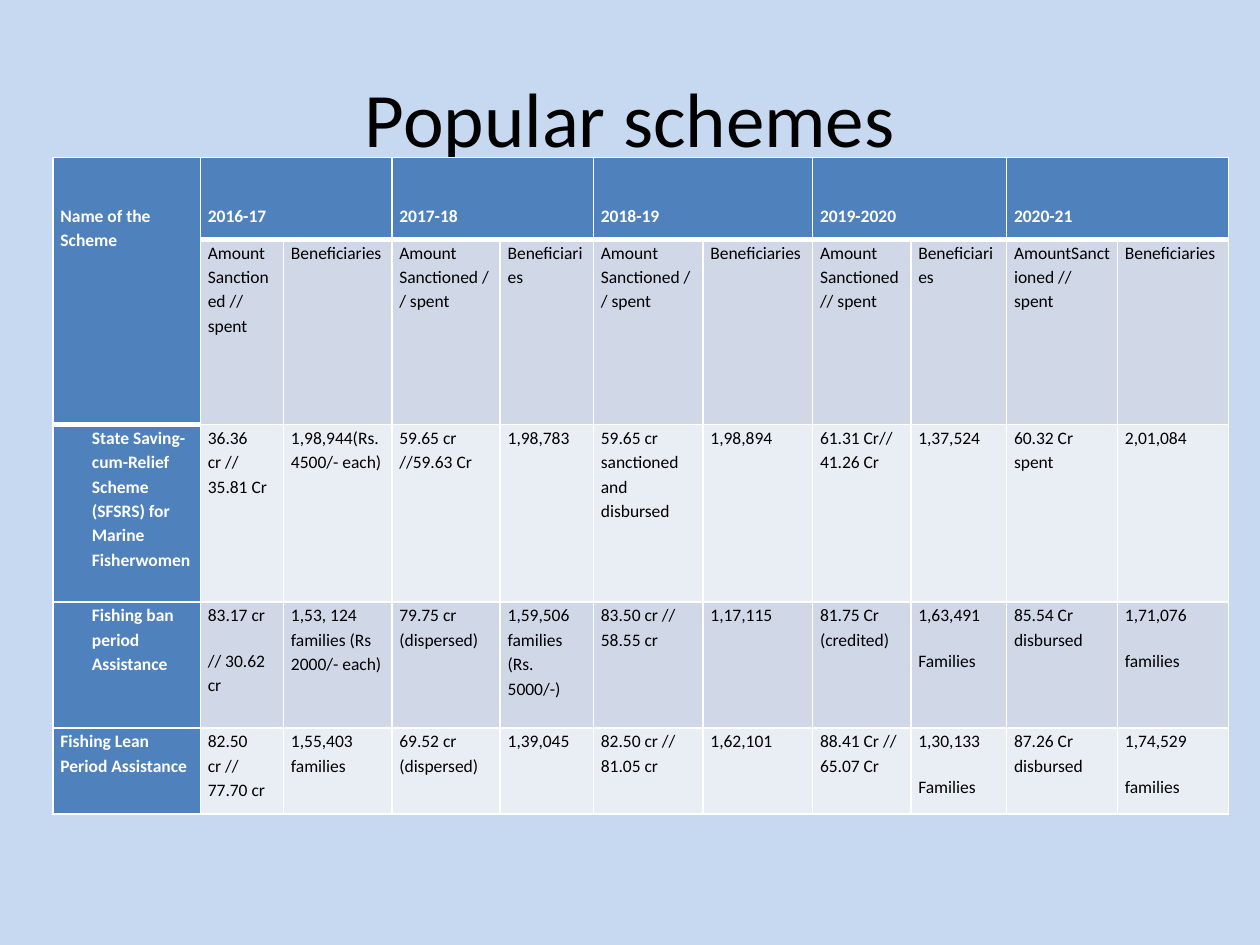
from copy import deepcopy

from lxml.etree import SubElement
from pptx import Presentation
from pptx.dml.color import RGBColor
from pptx.enum.text import MSO_ANCHOR, PP_ALIGN
from pptx.oxml.ns import qn
from pptx.util import Inches, Pt

SKY = RGBColor(0xC6, 0xD9, 0xF1)
BLUE = RGBColor(0x4F, 0x81, 0xBD)
BAND_DARK = RGBColor(0xD0, 0xD8, 0xE8)
BAND_LIGHT = RGBColor(0xE9, 0xED, 0xF4)
WHITE = RGBColor(0xFF, 0xFF, 0xFF)
BLACK = RGBColor(0x00, 0x00, 0x00)

GRID_COLUMNS, GRID_ROWS = 100, 75
COLUMN_SPANS = [11.7, 6.6, 8.6, 8.6, 7.4, 8.7, 8.7, 7.8, 7.6, 8.8, 8.8]
ROW_SPANS = [6.5, 14.7, 14.1, 10, 6.8]
INDENTED_ROWS = (2, 3)
PARAGRAPH_MARK = "|"

YEARS = ["2016-17", "2017-18", "2018-19", "2019-2020", "2020-21"]
AMOUNT = "Amount Sanctioned // spent"
AMOUNT_HEADINGS = [AMOUNT, "Amount\nSanctioned // spent", AMOUNT, AMOUNT,
                   "AmountSanctioned // spent"]
SCHEMES = [
    ["State Saving-cum-Relief Scheme (SFSRS) for Marine Fisherwomen",
     "36.36 cr //\n35.81 Cr", "1,98,944(Rs. 4500/- each)",
     "59.65 cr //59.63 Cr", "1,98,783",
     "59.65 cr sanctioned and disbursed", "1,98,894",
     "61.31 Cr// 41.26 Cr", "1,37,524",
     "60.32 Cr spent", "2,01,084"],
    ["Fishing ban period Assistance",
     "83.17 cr|// 30.62 cr", "1,53, 124 families (Rs 2000/- each)",
     "79.75 cr (dispersed)", "1,59,506 families (Rs. 5000/-)",
     "83.50 cr // 58.55 cr", "1,17,115",
     "81.75 Cr (credited)", "1,63,491|Families",
     "85.54 Cr disbursed", "1,71,076|families"],
    ["Fishing Lean Period Assistance",
     "82.50 cr // 77.70 cr", "1,55,403 families",
     "69.52 cr (dispersed)", "1,39,045",
     "82.50 cr // 81.05 cr", "1,62,101",
     "88.41 Cr // 65.07 Cr", "1,30,133|Families",
     "87.26 Cr disbursed", "1,74,529|families"],
]


def apply(target, values):
    for name, value in values.items():
        setattr(target, name, value)


class SlideBuilder:
    title_font = {"name": "Calibri", "size": Pt(44)}
    cell_font = {"name": "Calibri", "size": Pt(10)}
    cell_spacing = {"line_spacing": 1.15, "space_before": Pt(12)}
    cell_margins = {"margin_left": Inches(0.06), "margin_right": Inches(0.06),
                    "margin_top": 0, "margin_bottom": 0}
    heading_drop = Inches(0.36)
    scheme_indent = Inches(0.25)

    def __init__(self, deck):
        self.deck = deck
        self.slide = deck.slides.add_slide(deck.slide_layouts[5])

    def across(self, columns):
        return round(self.deck.slide_width * columns / GRID_COLUMNS)

    def down(self, rows):
        return round(self.deck.slide_height * rows / GRID_ROWS)

    def box(self, left, top, width, height):
        return {"left": self.across(left), "top": self.down(top),
                "width": self.across(width), "height": self.down(height)}

    def background(self, color):
        self.slide.background.fill.solid()
        self.slide.background.fill.fore_color.rgb = color

    def title(self, text, place):
        heading = self.slide.shapes.title
        apply(heading, self.box(*place))
        heading.text_frame.text = text
        heading.text_frame.vertical_anchor = MSO_ANCHOR.MIDDLE
        line = heading.text_frame.paragraphs[0]
        line.alignment = PP_ALIGN.CENTER
        apply(line.runs[0].font, self.title_font)
        line.runs[0].font.color.rgb = BLACK

    def table(self, left, top, column_spans, row_spans):
        place = self.box(left, top, sum(column_spans), sum(row_spans))
        schemes = self.slide.shapes.add_table(
            len(row_spans), len(column_spans), **place).table
        apply(schemes, {"first_row": False, "horz_banding": False})
        for column, span in zip(schemes.columns, column_spans):
            column.width = self.across(span)
        for row, span in zip(schemes.rows, row_spans):
            row.height = self.down(span)
        return schemes

    def borders(self, cell, top, bottom):
        properties = cell._tc.get_or_add_tcPr()
        for edge, points in {"lnL": 1, "lnR": 1, "lnT": top, "lnB": bottom}.items():
            line = SubElement(properties, qn(f"a:{edge}"), w=str(Pt(points)))
            solid = SubElement(line, qn("a:solidFill"))
            SubElement(solid, qn("a:srgbClr"), val=str(WHITE))

    def cell(self, cell, text, fill, header, indent=0, drop=0, top=1, bottom=1):
        self.borders(cell, top, bottom)
        cell.fill.solid()
        cell.fill.fore_color.rgb = fill
        apply(cell, {**self.cell_margins, "margin_top": drop})
        frame = cell.text_frame
        for index, content in enumerate(text.split(PARAGRAPH_MARK)):
            paragraph = frame.add_paragraph() if index else frame.paragraphs[0]
            paragraph.text = content
            apply(paragraph, self.cell_spacing)
            if indent:
                paragraph._p.get_or_add_pPr().set("marL", str(indent))
            for run in paragraph.runs:
                apply(run.font, {**self.cell_font, "bold": header})
                run.font.color.rgb = WHITE if header else BLACK
            for line_break in paragraph._p.findall(qn("a:br")):
                line_break.append(deepcopy(paragraph.runs[0]._r.rPr))


def main():
    deck = Presentation()
    apply(deck, {"slide_width": Inches(10), "slide_height": Inches(7.5)})
    page = SlideBuilder(deck)
    page.background(SKY)
    page.title("Popular schemes", (5, 3, 90, 12.5))
    schemes = page.table(4.2, 12.5, COLUMN_SPANS, ROW_SPANS)

    year_row, heading_row = ["Name of the Scheme"], [""]
    for year, amount in zip(YEARS, AMOUNT_HEADINGS):
        year_row += [year, ""]
        heading_row += [amount, "Beneficiaries"]

    for r, texts in enumerate([year_row, heading_row, *SCHEMES]):
        for c, text in enumerate(texts):
            header = r == 0 or c == 0
            band = BAND_DARK if r % 2 else BAND_LIGHT
            under_header = r == (2 if c == 0 else 1)
            page.cell(
                schemes.cell(r, c), text, BLUE if header else band, header,
                indent=page.scheme_indent if c == 0 and r in INDENTED_ROWS else 0,
                drop=page.heading_drop if r == 0 else 0,
                top=3 if under_header else 1,
                bottom=3 if r == 0 or (r == 1 and c == 0) else 1)

    schemes.cell(0, 0).merge(schemes.cell(1, 0))
    for c in range(1, len(COLUMN_SPANS), 2):
        schemes.cell(0, c).merge(schemes.cell(0, c + 1))
    deck.save("out.pptx")


if __name__ == "__main__":
    main()
